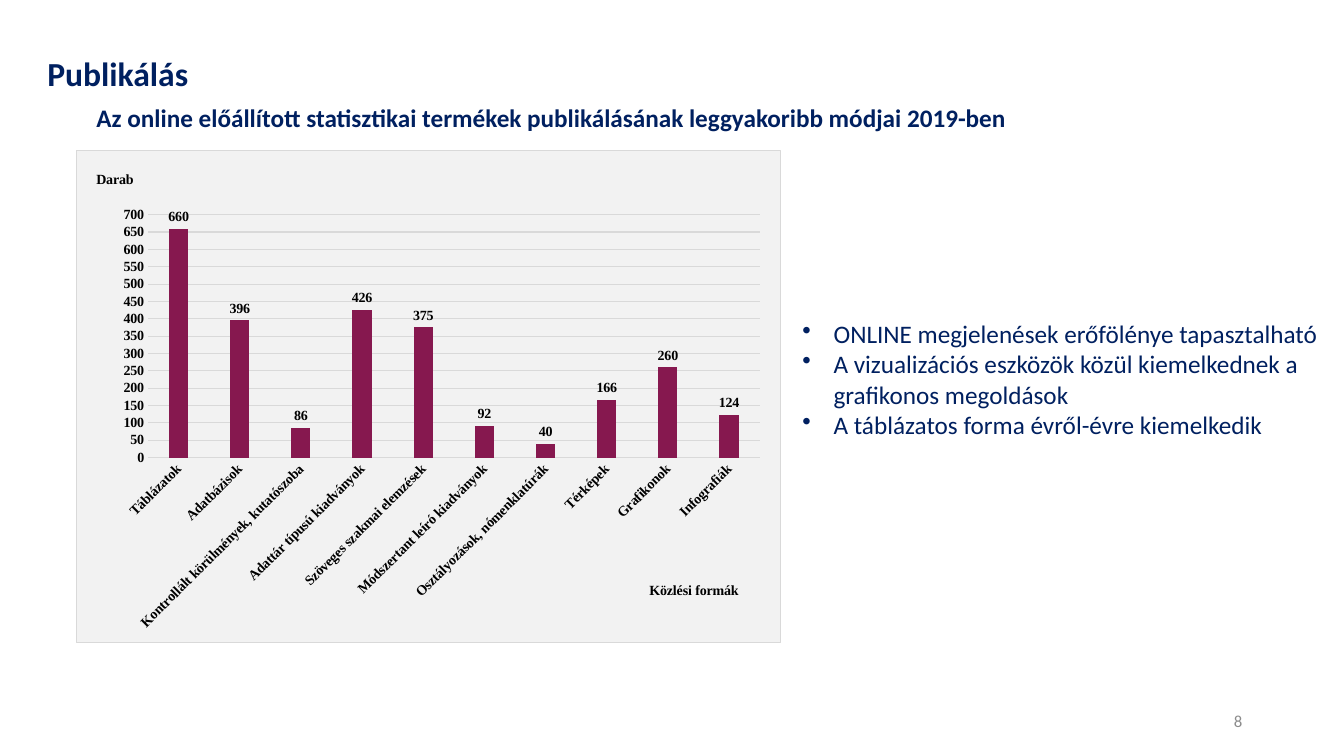
import pptx
import pptx.util
import pptx.chart.data
import pptx.dml.color
import pptx.enum.chart
import pptx.enum.text
import pptx.oxml
import pptx.oxml.ns

Pt = pptx.util.Pt
Inches = pptx.util.Inches
RGB = pptx.dml.color.RGBColor
Align = pptx.enum.text.PP_ALIGN
Anchor = pptx.enum.text.MSO_ANCHOR
qn = pptx.oxml.ns.qn

NAVY = RGB(0x00, 0x20, 0x60)
GREY = RGB(0x8C, 0x8C, 0x8C)
BLACK = RGB(0x00, 0x00, 0x00)
PALE = RGB(0xF2, 0xF2, 0xF2)
RULE = RGB(0xD9, 0xD9, 0xD9)
PLUM = RGB(0x86, 0x18, 0x4F)
SANS, SERIF = "Calibri", "Times New Roman"
WIDE, HIGH = Inches(13.33), Inches(7.5)

FORMS = {
    "Táblázatok": 660,
    "Adatbázisok": 396,
    "Kontrollált körülmények, kutatószoba": 86,
    "Adattár típusú kiadványok": 426,
    "Szöveges szakmai elemzések": 375,
    "Módszertant leíró kiadványok": 92,
    "Osztályozások, nómenklatúrák": 40,
    "Térképek": 166,
    "Grafikonok": 260,
    "Infografiák": 124,
}
POINTS = [
    "ONLINE megjelenések erőfölénye tapasztalható",
    "A vizualizációs eszközök közül kiemelkednek a grafikonos megoldások",
    "A táblázatos forma évről-évre kiemelkedik",
]


def place(left, top, width, height):
    """Turn percentages of the slide into lengths."""
    return (int(WIDE * left / 100), int(HIGH * top / 100),
            int(WIDE * width / 100), int(HIGH * height / 100))


def style(font, face, size, color, bold):
    font.name, font.size, font.bold = face, Pt(size), bold
    font.color.rgb = color


def add_text(slide, area, text, size, color=NAVY, bold=False,
             align=Align.LEFT, anchor=Anchor.TOP):
    frame = slide.shapes.add_textbox(*place(*area)).text_frame
    frame.word_wrap = True
    frame.vertical_anchor = anchor
    frame.text = text
    for para in frame.paragraphs:
        para.alignment = align
        for run in para.runs:
            style(run.font, SANS, size, color, bold)
    return frame


def add_bullets(frame):
    for para in frame.paragraphs:
        props = para._p.get_or_add_pPr()
        props.set("marL", str(Inches(0.31)))
        props.set("indent", str(-Inches(0.31)))
        mark = pptx.oxml.parse_xml(
            f'<a:buChar {pptx.oxml.ns.nsdecls("a")} char="•"/>')
        props.append(mark)


def make_layout(x, y, w=None, h=None):
    """Build a manual layout from shares of the chart's size."""
    parts = '<c:layoutTarget val="inner"/>' if w else ""
    parts += '<c:xMode val="edge"/><c:yMode val="edge"/>'
    for tag, share in zip("xywh", (x, y, w, h)):
        if share is not None:
            parts += f'<c:{tag} val="{share}"/>'
    return pptx.oxml.parse_xml(
        f'<c:layout {pptx.oxml.ns.nsdecls("c")}>'
        f'<c:manualLayout>{parts}</c:manualLayout></c:layout>')


def set_layout(host, layout, spot):
    for old in host.findall(qn("c:layout")):
        host.remove(old)
    host.insert(spot, layout)


def name_axis(axis, text, x, y):
    title = axis.axis_title
    frame = title.text_frame
    frame.text = text
    style(frame.paragraphs[0].runs[0].font, SERIF, 10, BLACK, True)
    frame._txBody.find(qn("a:bodyPr")).set("rot", "0")
    set_layout(title._element, make_layout(x, y), 1)


def draw_rule(line):
    line.color.rgb = RULE
    line.width = Pt(0.75)


def fill_back(chart):
    """Give the whole chart a pale ground and a thin border."""
    back = pptx.oxml.parse_xml(
        f'<c:spPr {pptx.oxml.ns.nsdecls("c", "a")}>'
        f'<a:solidFill><a:srgbClr val="{PALE}"/></a:solidFill>'
        f'<a:ln w="{Pt(0.75)}"><a:solidFill><a:srgbClr val="{RULE}"/>'
        '</a:solidFill></a:ln></c:spPr>')
    chart.element.find(qn("c:chart")).addnext(back)


def add_columns(slide, area):
    data = pptx.chart.data.CategoryChartData()
    data.categories = list(FORMS)
    data.add_series("Darab", list(FORMS.values()))
    chart = slide.shapes.add_chart(
        pptx.enum.chart.XL_CHART_TYPE.COLUMN_CLUSTERED,
        *place(*area), data).chart
    chart.has_title = chart.has_legend = False
    style(chart.font, SERIF, 10, BLACK, True)
    fill_back(chart)
    plot_area = chart.element.find(qn("c:chart")).find(qn("c:plotArea"))
    set_layout(plot_area, make_layout(0.102, 0.13, 0.868, 0.494), 0)

    plot = chart.plots[0]
    plot.vary_by_categories = False
    plot.gap_width, plot.overlap = 219, -27
    bars = plot.series[0].format.fill
    bars.solid()
    bars.fore_color.rgb = PLUM
    plot.has_data_labels = True
    labels = plot.data_labels
    labels.show_value = True
    labels.position = pptx.enum.chart.XL_LABEL_POSITION.OUTSIDE_END
    style(labels.font, SERIF, 10, BLACK, True)

    forms, count = chart.category_axis, chart.value_axis
    for axis in (forms, count):
        axis.major_tick_mark = pptx.enum.chart.XL_TICK_MARK.NONE
        axis.minor_tick_mark = pptx.enum.chart.XL_TICK_MARK.NONE
        style(axis.tick_labels.font, SERIF, 10, BLACK, True)
    tilt = forms._element.find(qn("c:txPr")).find(qn("a:bodyPr"))
    tilt.set("rot", str(-45 * 60000))
    draw_rule(forms.format.line)
    count.minimum_scale, count.maximum_scale = 0, 700
    count.major_unit = 50
    count.format.line.fill.background()
    draw_rule(count.major_gridlines.format.line)
    name_axis(forms, "Közlési formák", 0.81, 0.87)
    name_axis(count, "Darab", 0.025, 0.035)


def main():
    deck = pptx.Presentation()
    deck.slide_width, deck.slide_height = WIDE, HIGH
    slide = deck.slides.add_slide(deck.slide_layouts[6])
    head = add_text(slide, (2.78, 4.8, 67.82, 10.4), "Publikálás", 24,
                    bold=True, anchor=Anchor.MIDDLE)
    head.paragraphs[0].line_spacing = 0.9
    add_text(slide, (70.67, 92.67, 22.5, 5.33), "8", 12, GREY,
             align=Align.RIGHT, anchor=Anchor.MIDDLE)
    add_text(slide, (5.63, 12.93, 70.82, 5.33),
             "Az online előállított statisztikai termékek publikálásának "
             "leggyakoribb módjai 2019-ben", 18, bold=True,
             align=Align.CENTER)
    add_bullets(add_text(slide, (58.96, 41.47, 42.31, 17.47),
                         "\n".join(POINTS), 18))
    add_columns(slide, (5.63, 19.87, 52.51, 65.2))
    deck.save("out.pptx")


if __name__ == "__main__":
    main()
